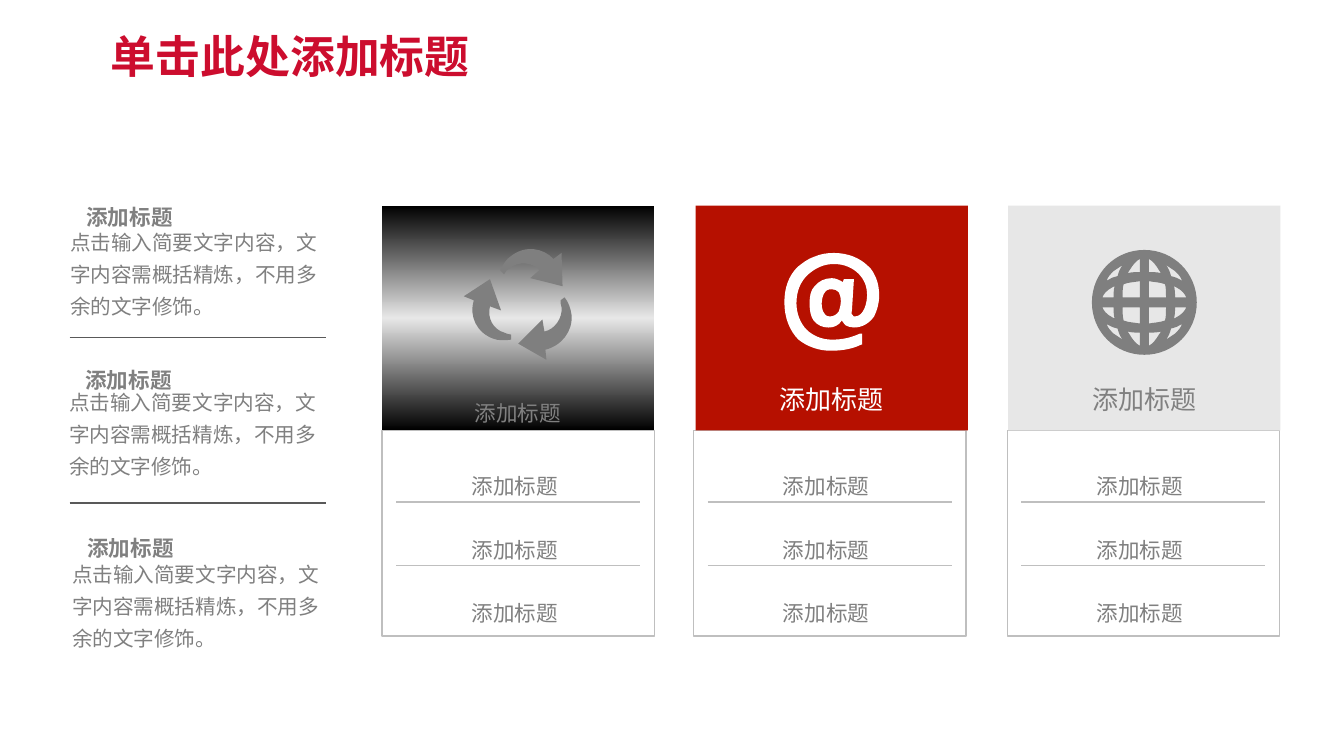
from lxml import etree
from pptx import Presentation
from pptx.dml.color import RGBColor
from pptx.enum import shapes, text
from pptx.oxml.ns import qn
from pptx.util import Inches, Pt

FONT = "Noto Sans CJK SC"
GRAY = "808080"
HEADING = "添加标题"
BODY = "点击输入简要文字内容，文字内容需概括精炼，不用多余的文字修饰。"

# Icon outlines in hundredths of an inch: pairs are corners, sixes are Bézier curves
ARROWS = [
    [(82, 114), (54, 98), (78, 74), (80, 86), (90, 84, 98, 73, 97, 62),
     (96, 59, 96, 57, 96, 55), (100, 52), (104, 57, 106, 63, 107, 70),
     (108, 86, 97, 100, 81, 104)],
    [(0, 51), (26, 34), (37, 65), (26, 61), (23, 72, 29, 84, 40, 87),
     (42, 88, 45, 89, 47, 89), (47, 94), (41, 95, 34, 95, 29, 93),
     (13, 87, 5, 71, 10, 55)],
    [(97, 8), (89, 14), (79, 3, 61, 0, 47, 11), (42, 14, 39, 20, 36, 25),
     (40, 29), (42, 26, 43, 24, 46, 23), (54, 16, 68, 17, 75, 25),
     (66, 33), (98, 41)],
]
AT_SIGN = [
    [(94, 42), (94, 50, 92, 57, 89, 63), (84, 70, 77, 74, 69, 74),
     (66, 74, 63, 73, 61, 72), (60, 71, 58, 69, 57, 67), (54, 72, 49, 74, 44, 74),
     (38, 74, 33, 72, 29, 67), (26, 63, 25, 57, 25, 50), (25, 43, 26, 37, 30, 33),
     (34, 28, 40, 25, 47, 25), (51, 25, 55, 27, 58, 29), (59, 26), (69, 26), (67, 57),
     (66, 60, 67, 62, 68, 62), (68, 63, 69, 63, 70, 63), (79, 63, 82, 49, 82, 42),
     (82, 33, 79, 26, 74, 21), (68, 15, 60, 11, 49, 11), (39, 11, 31, 15, 24, 21),
     (16, 28, 12, 38, 12, 50), (12, 60, 16, 70, 22, 76), (28, 82, 37, 86, 47, 86),
     (58, 86, 66, 84, 75, 80), (77, 80), (77, 91), (76, 91), (68, 95, 58, 97, 46, 97),
     (34, 97, 23, 93, 14, 86), (5, 77, 0, 64, 0, 49), (0, 35, 4, 23, 13, 14),
     (18, 10, 23, 6, 29, 4), (36, 1, 42, 0, 49, 0), (63, 0, 75, 5, 83, 13),
     (87, 16, 89, 21, 91, 25), (93, 30, 94, 36, 94, 42)],
    [(54, 58), (55, 55, 56, 51, 56, 48), (56, 44, 55, 41, 54, 39),
     (52, 37, 50, 36, 47, 36), (43, 36, 41, 37, 39, 41), (38, 43, 37, 47, 37, 50),
     (37, 54, 38, 63, 45, 63), (49, 63, 52, 61, 54, 58)],
]
# Globe outlines measured from its centre; the gaps are those of one quarter
GLOBE_RIM = [(0, -52), (29, -52, 52, -29, 52, 0), (52, 29, 29, 52, 0, 52),
             (-29, 52, -52, 29, -52, 0), (-52, -29, -29, -52, 0, -52)]
GLOBE_GAPS = [
    [(4.5, 43), (4.5, 30), (8.5, 30, 12.5, 30, 16.5, 29),
     (15.5, 30, 15.5, 31, 14.5, 32), (11.5, 37, 8.5, 41, 4.5, 43)],
    [(4.5, 21), (4.5, 5), (21.5, 5), (21.5, 10, 21.5, 15, 20.5, 18),
     (15.5, 20, 9.5, 20, 4.5, 21)],
    [(30.5, 5), (41.5, 5), (40.5, 8, 37.5, 12, 31.5, 15), (29.5, 16),
     (30.5, 12, 30.5, 8, 30.5, 5)],
    [(26.5, 26), (30.5, 25, 33.5, 24, 36.5, 22), (37.5, 21),
     (36.5, 25, 33.5, 28, 30.5, 31), (27.5, 33, 24.5, 35, 21.5, 37),
     (24, 34, 25.5, 30, 26.5, 26)],
]


def color(value):
    return RGBColor.from_string(value)


def mirror(outline, signs, center=52):
    return [tuple(center + value * signs[index % 2] for index, value in enumerate(step))
            for step in outline]


def globe():
    quarters = [(x, y) for x in (-1, 1) for y in (-1, 1)]
    return [mirror(GLOBE_RIM, (1, 1))] + [mirror(gap, signs) for signs in quarters
                                          for gap in GLOBE_GAPS]


def add_icon(slide, left, top, outlines, fill):
    def place(x, y):
        return Inches(left + x / 100), Inches(top + y / 100)

    builder = None
    for outline in outlines:
        corners = [place(*step[-2:]) for step in outline]
        if builder is None:
            builder = slide.shapes.build_freeform(*corners[0], scale=1.0)
        else:
            builder.move_to(*corners[0])
        builder.add_line_segments(corners[1:], close=True)
    icon = builder.convert_to_shape()
    icon.shadow.inherit = False
    icon.fill.solid()
    icon.fill.fore_color.rgb = color(fill)
    icon.line.fill.background()
    # Bend the segments that are curves; closing lines have no step of their own
    outline_path = icon._element.spPr.find(qn("a:custGeom")).find(qn("a:pathLst"))[0]
    segments = [node for node in outline_path if node.tag != qn("a:close")]
    steps = []
    for outline in outlines:
        steps += outline
        if outline[0] != outline[-1][-2:] and len(segments) > sum(map(len, outlines)):
            steps.append(outline[0])
    for segment, step in zip(segments, steps):
        if len(step) == 6:
            curve = etree.Element(qn("a:cubicBezTo"))
            for index in (0, 2, 4):
                x, y = place(*step[index:index + 2])
                etree.SubElement(curve, qn("a:pt"), x=str(x - icon.left), y=str(y - icon.top))
            outline_path.replace(segment, curve)


def add_text(slide, left, top, width, height, words, size, fill=GRAY, bold=False,
             lowered=False, align=text.PP_ALIGN.CENTER, spacing=None):
    box = slide.shapes.add_textbox(Inches(left), Inches(top), Inches(width), Inches(height))
    frame = box.text_frame
    frame.word_wrap = True
    frame.auto_size = text.MSO_AUTO_SIZE.SHAPE_TO_FIT_TEXT
    paragraph = frame.paragraphs[0]
    paragraph.text = words
    paragraph.alignment = align
    paragraph.line_spacing = spacing
    font = paragraph.font
    font.name, font.size, font.bold = FONT, Pt(size), bold
    font.color.rgb = color(fill)
    properties = paragraph._p.pPr.find(qn("a:defRPr"))
    etree.SubElement(properties, qn("a:ea")).set("typeface", FONT)
    if lowered:
        properties.set("baseline", "-3000")


def add_label(slide, left, top, width=1.45, bold=False):
    add_text(slide, left, top, width, 0.4, HEADING, 26.6, bold=bold, lowered=True)


def add_rule(slide, left, top, width, stroke):
    line = slide.shapes.add_connector(shapes.MSO_CONNECTOR.STRAIGHT, Inches(left), Inches(top),
                                      Inches(left + width), Inches(top))
    line.line.color.rgb = color(stroke)
    line.line.width = Pt(1)
    etree.SubElement(line._element.spPr, qn("a:effectLst"))


def add_rectangle(slide, left, top, width, height):
    shape = slide.shapes.add_shape(shapes.MSO_SHAPE.RECTANGLE, Inches(left), Inches(top),
                                   Inches(width), Inches(height))
    shape.shadow.inherit = False
    return shape


def fill_metal(shape):
    shape.fill.gradient()
    shape.fill.gradient_angle = 90
    stops = shape._element.spPr.find(qn("a:gradFill")).find(qn("a:gsLst"))
    for stop in list(stops):
        stops.remove(stop)
    for position, value in ((0, "000000"), (50000, "E7E7E7"), (100000, "000000")):
        stop = etree.SubElement(stops, qn("a:gs"), pos=str(position))
        etree.SubElement(stop, qn("a:srgbClr"), val=value)


def add_title(slide, left, top, width, height):
    title = slide.shapes.title
    title.left, title.top, title.width, title.height = map(Inches, (left, top, width, height))
    title.text_frame.text = "单击此处添加标题"
    title.text_frame.vertical_anchor = text.MSO_ANCHOR.MIDDLE
    paragraph = title.text_frame.paragraphs[0]
    paragraph.alignment = text.PP_ALIGN.LEFT
    paragraph.line_spacing = 0.9
    font = paragraph.font
    font.name, font.size, font.bold = "Montserrat", Pt(32), True
    font.color.rgb = color("CC0D2E")


def add_notes_column(slide, left, top):
    for offset in (1.54, 3.18):
        add_rule(slide, left + 0.14, top + offset, 2.54, "595959")
    for heading_x, heading_y, heading_width, body_x, body_y in (
            (-0.22, 0, 1.91, 0.05, 0.35), (0, 1.62, 1.45, 0.04, 1.94),
            (0.02, 3.28, 1.45, 0.07, 3.64)):
        add_label(slide, left + heading_x, top + heading_y, heading_width, bold=True)
        add_text(slide, left + body_x, top + body_y, 2.83, 1.06, BODY, 14.65,
                 align=text.PP_ALIGN.LEFT, spacing=1.3)


def add_card(slide, left, top, header_shift, header_fill, icon, icon_x, icon_y, ink,
             label_x, lowered):
    width, header_height = 2.7, 2.23
    # Framed list
    for row in range(3):
        add_label(slide, left + 0.59, top + 2.44 + 0.63 * row)
    frame = add_rectangle(slide, left, top + header_height, width, 2.04)
    frame.fill.background()
    frame.line.color.rgb = color("BFBFBF")
    frame.line.width = Pt(1)
    for row in range(2):
        add_rule(slide, left + 0.14, top + 2.94 + 0.63 * row, 2.42, "BFBFBF")
    # Coloured header with its icon and label
    header = add_rectangle(slide, left + header_shift, top, width, header_height)
    header.line.fill.background()
    if header_fill:
        header.fill.solid()
        header.fill.fore_color.rgb = color(header_fill)
    else:
        fill_metal(header)
    add_icon(slide, left + icon_x, top + icon_y, icon, ink or "7F7F7F")
    if lowered:
        add_label(slide, left + label_x, top + 1.71)
    else:
        add_text(slide, left + label_x, top + 1.72, 1.45, 0.41, HEADING, 18.6, ink or GRAY)


def main():
    presentation = Presentation()
    presentation.slide_width, presentation.slide_height = Inches(13.33), Inches(7.5)
    slide = presentation.slides.add_slide(presentation.slide_layouts[5])
    add_title(slide, 1, 0.28, 11.5, 0.62)
    add_notes_column(slide, 0.55, 1.81)
    add_card(slide, 3.79, 2.04, 0, None, ARROWS, 0.81, 0.39, None, 0.62, True)
    add_card(slide, 9.99, 2.04, 0.01, "E7E7E7", globe(), 0.84, 0.44, None, 0.64, False)
    add_card(slide, 6.88, 2.04, 0.02, "B61000", AT_SIGN, 0.9, 0.47, "FFFFFF", 0.64, False)
    presentation.save("out.pptx")


if __name__ == "__main__":
    main()
